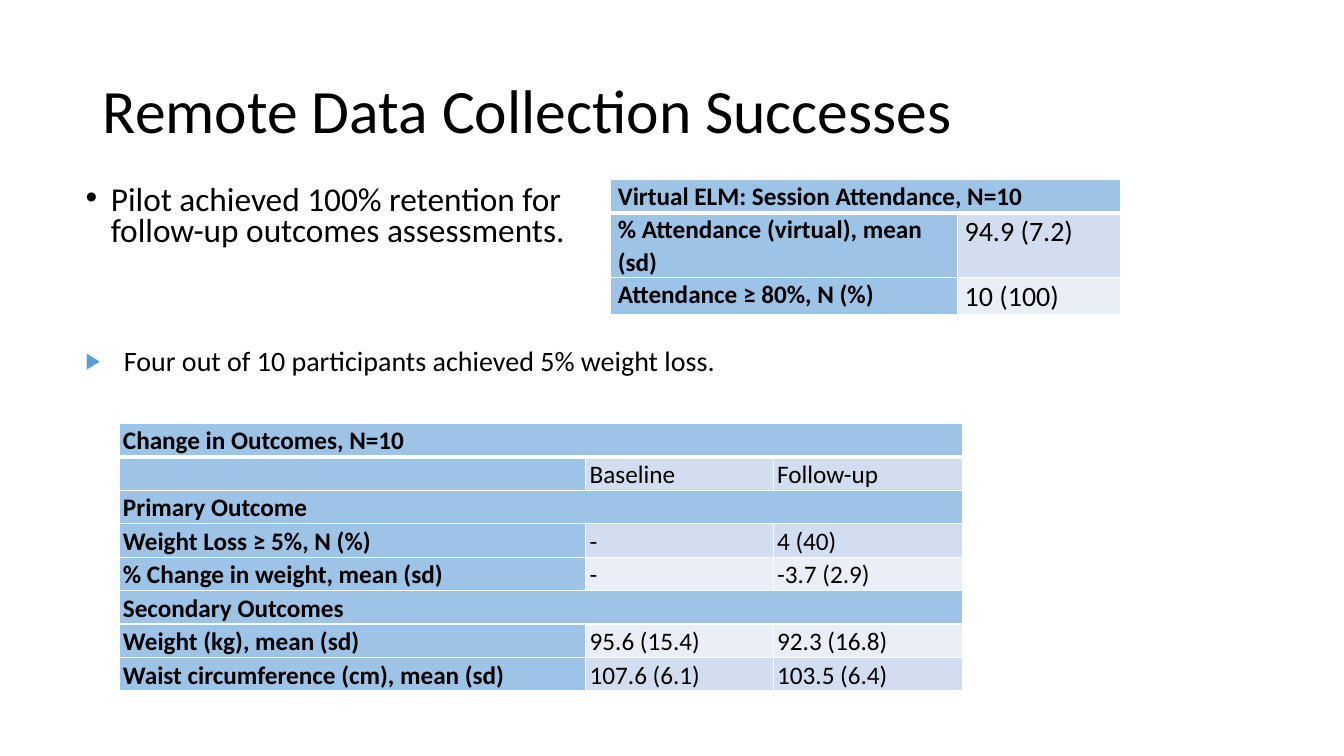
from pptx import Presentation
from pptx.dml.color import RGBColor as Rgb
from pptx.enum.text import MSO_ANCHOR as Anchor, MSO_AUTO_SIZE as AutoSize, PP_ALIGN as Align
from pptx.oxml.ns import qn
from pptx.util import Inches, Pt
from lxml.etree import SubElement

WIDTH, HEIGHT = Inches(13.333), Inches(7.5)
FONT = "Calibri"
COLOURS = {
    "text": "000000",
    "label": "9DC3E6",
    "band_dark": "D2DEEF",
    "band_light": "EAEFF7",
    "border": "FFFFFF",
    "arrow": "5B9BD5",
}

ATTENDANCE = [
    ("Virtual ELM: Session Attendance, N=10",),
    ("% Attendance (virtual), mean (sd)", "94.9 (7.2)"),
    ("Attendance ≥ 80%, N (%)", "10 (100)"),
]
OUTCOMES = [
    ("Change in Outcomes, N=10",),
    ("", "Baseline", "Follow-up"),
    ("Primary Outcome",),
    ("Weight Loss ≥ 5%, N (%)", "-", "4 (40)"),
    ("% Change in weight, mean (sd)", "-", "-3.7 (2.9)"),
    ("Secondary Outcomes",),
    ("Weight (kg), mean (sd)", "95.6 (15.4)", "92.3 (16.8)"),
    ("Waist circumference (cm), mean (sd)", "107.6 (6.1)", "103.5 (6.4)"),
]


def across(percent):
    return round(WIDTH * percent / 100)


def down(percent):
    return round(HEIGHT * percent / 100)


def area(left, top, width, height):
    """Turn percentages of the slide into a left, top, width, height tuple."""
    return across(left), down(top), across(width), down(height)


def format_text(para, size, bold=False, line_spacing=1.0):
    para.line_spacing = line_spacing
    for span in para.runs:
        span.font.name = FONT
        span.font.size = Pt(size)
        span.font.bold = bold
        span.font.color.rgb = Rgb.from_string(COLOURS["text"])


def set_title(page, text):
    title = page.shapes.title
    title.left, title.top, title.width, title.height = area(6.9, 5.33, 86.25, 19.33)
    frame = title.text_frame
    frame.text = text
    frame.word_wrap = True
    frame.auto_size = AutoSize.NONE
    frame.vertical_anchor = Anchor.MIDDLE
    para = frame.paragraphs[0]
    para.alignment = Align.LEFT
    format_text(para, 44, line_spacing=0.9)


def add_bullet(page, place, text, size, mark, indent, line_spacing=1.0, colour=None, scale=100):
    """Add a one-paragraph text box whose mark hangs by indent inches."""
    frame = page.shapes.add_textbox(*place).text_frame
    frame.word_wrap = True
    frame.text = text
    para = frame.paragraphs[0]
    format_text(para, size, line_spacing=line_spacing)
    para.space_before = Pt(10)
    props = para._p.get_or_add_pPr()
    props.set("marL", str(Inches(indent)))
    props.set("indent", str(-Inches(indent)))
    if colour:
        SubElement(SubElement(props, qn("a:buClr")), qn("a:srgbClr"), val=colour)
    SubElement(props, qn("a:buSzPct"), val=str(scale * 1000))
    SubElement(props, qn("a:buFont"), typeface="Arial")
    SubElement(props, qn("a:buChar"), char=mark)


def add_borders(cell, row_index):
    """Draw thin white borders, with a thick one under the header row."""
    thick_side = {0: "B", 1: "T"}.get(row_index)
    props = cell._tc.get_or_add_tcPr()
    for side in "LRTB":
        width = Pt(3 if side == thick_side else 1)
        line = SubElement(props, qn(f"a:ln{side}"), w=str(width))
        SubElement(SubElement(line, qn("a:solidFill")), qn("a:srgbClr"), val=COLOURS["border"])


def add_data_table(page, left, top, columns, heights, rows, value_size, side, head, line_spacing):
    """Add a table; side and head are cell insets, one-entry rows span every column."""
    place = area(left, top, sum(columns), sum(heights))
    table = page.shapes.add_table(len(rows), len(columns), *place).table
    for column, width in zip(table.columns, columns):
        column.width = across(width)
    for i, (entries, height) in enumerate(zip(rows, heights)):
        table.rows[i].height = down(height)
        band = "band_dark" if i % 2 else "band_light"
        for j in range(len(columns)):
            cell = table.cell(i, j)
            is_label = j == 0 or len(entries) == 1
            cell.margin_left = cell.margin_right = Inches(side)
            cell.margin_top, cell.margin_bottom = Inches(head), 0
            add_borders(cell, i)
            cell.fill.solid()
            cell.fill.fore_color.rgb = Rgb.from_string(COLOURS["label" if is_label else band])
            if j < len(entries):
                para = cell.text_frame.paragraphs[0]
                para.text = entries[j]
                format_text(para, 18 if is_label else value_size, is_label, line_spacing)
        if len(entries) == 1:
            table.cell(i, 0).merge(table.cell(i, len(columns) - 1))


def main():
    deck = Presentation()
    deck.slide_width, deck.slide_height = WIDTH, HEIGHT
    page = deck.slides.add_slide(deck.slide_layouts[5])
    set_title(page, "Remote Data Collection Successes")
    add_bullet(page, area(5.63, 23.87, 39.83, 11.87),
               "Pilot achieved 100% retention for follow-up outcomes assessments.",
               23.8, "•", 0.25, line_spacing=0.8)
    add_data_table(page, 45.45, 23.73, [25.8, 12.15], [4.4, 8.6, 4.9], ATTENDANCE,
                   value_size=20, side=0.07, head=0, line_spacing=1.07)
    add_data_table(page, 8.85, 56, [34.73, 13.95, 14.1], [4.43] * len(OUTCOMES), OUTCOMES,
                   value_size=18, side=0.04, head=0.01, line_spacing=1.05)
    add_bullet(page, area(5.63, 44.8, 73.35, 8),
               "Four out of 10 participants achieved 5% weight loss.",
               20, "▶", 0.38, colour=COLOURS["arrow"], scale=80)
    deck.save("out.pptx")


if __name__ == "__main__":
    main()
